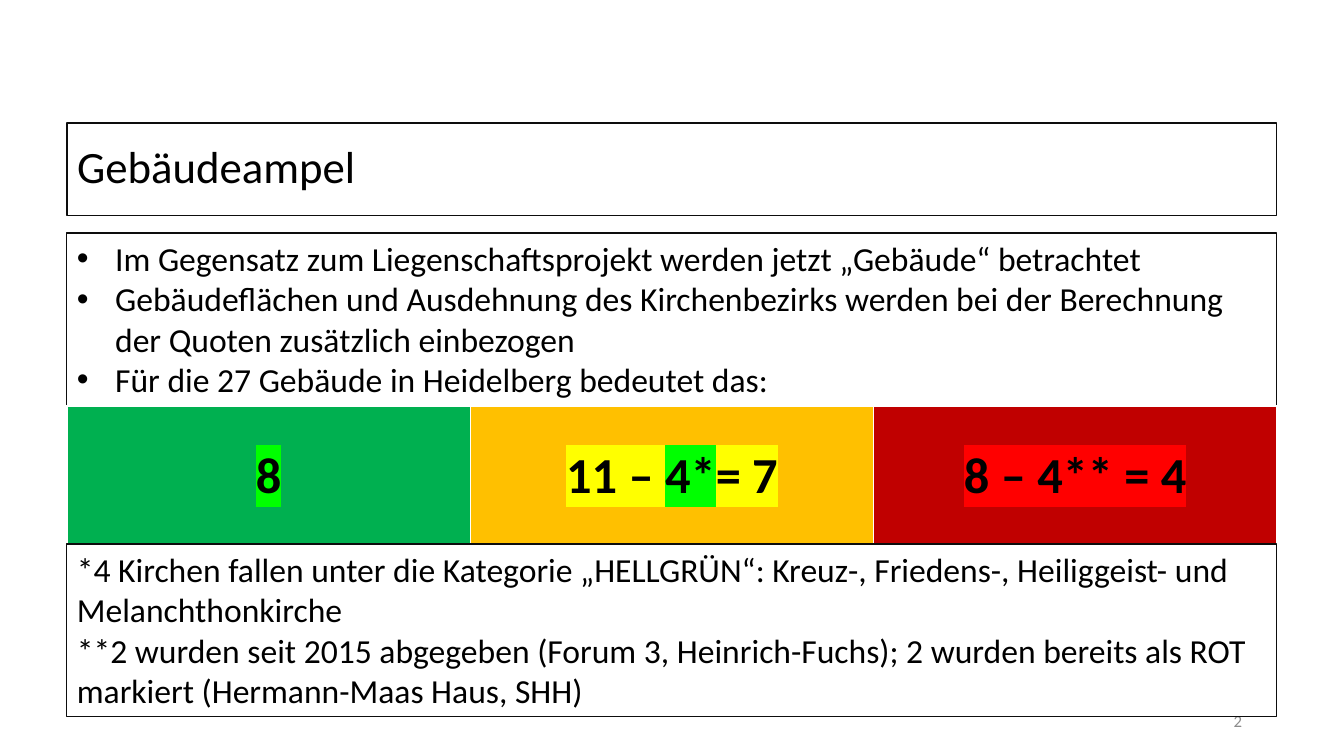
from lxml import etree
from pptx import Presentation
from pptx import util as u
from pptx.dml.color import RGBColor
from pptx.enum import shapes, text
from pptx.oxml.ns import qn

PX = 914400 / 100.8
FONT, BLACK, BORDER = "Calibri", "000000", "0D0D0D"
LEFT, WIDTH = 67, 1210

TITLE = "Gebäudeampel"
POINTS = [
    "Im Gegensatz zum Liegenschaftsprojekt werden jetzt „Gebäude“ betrachtet",
    "Gebäudeflächen und Ausdehnung des Kirchenbezirks werden bei der Berechnung "
    "der Quoten zusätzlich einbezogen",
    "Für die 27 Gebäude in Heidelberg bedeutet das:",
]
# cell fill, then runs of text with their highlight
LIGHTS = [
    ("00B050", [("8", "00FF00")]),
    ("FFC000", [("11 – ", "FFFF00"), ("4*", "00FF00"), ("= 7", "FFFF00")]),
    ("C00000", [("8 – 4** = 4", "FF0000")]),
]
FOOTNOTES = [
    "*4 Kirchen fallen unter die Kategorie „HELLGRÜN“: Kreuz-, Friedens-, "
    "Heiliggeist- und Melanchthonkirche",
    "**2 wurden seit 2015 abgegeben (Forum 3, Heinrich-Fuchs); 2 wurden bereits "
    "als ROT markiert (Hermann-Maas Haus, SHH)",
]
PAGE = "2"


def px(*lengths):
    return [round(n * PX) for n in lengths]


def rgb(value):
    return RGBColor.from_string(value)


def style(font, size, color=BLACK, bold=False):
    font.name, font.size, font.bold = FONT, u.Pt(size), bold
    font.color.rgb = rgb(color)


def outline(sp):
    sp.fill.background()
    sp.line.color.rgb = rgb(BORDER)
    sp.line.width = u.Pt(0.75)


def add_bullet(p):
    pPr = p._p.get_or_add_pPr()
    indent = u.Inches(0.38)
    pPr.set("marL", str(indent))
    pPr.set("indent", str(-indent))
    etree.SubElement(pPr, qn("a:buFont"), typeface="Arial")
    etree.SubElement(pPr, qn("a:buChar"), char="•")


def highlight(r, color):
    mark = etree.Element(qn("a:highlight"))
    etree.SubElement(mark, qn("a:srgbClr"), val=color)
    r._r.rPr.find(qn("a:solidFill")).addnext(mark)


def add_box(s, top, height, lines, bulleted=False):
    sp = s.shapes.add_shape(shapes.MSO_SHAPE.RECTANGLE, *px(LEFT, top, WIDTH, height))
    sp.shadow.inherit = False
    outline(sp)
    tf = sp.text_frame
    tf.word_wrap = True
    tf.vertical_anchor = text.MSO_ANCHOR.TOP
    tf.text = "\n".join(lines)
    for p in tf.paragraphs:
        p.alignment = text.PP_ALIGN.LEFT
        if bulleted:
            add_bullet(p)
        style(p.runs[0].font, 24)


def add_title(s):
    sp = s.shapes.title
    sp.left, sp.top, sp.width, sp.height = px(LEFT, 123, WIDTH, 93)
    outline(sp)
    tf = sp.text_frame
    tf.text = TITLE
    tf.auto_size = text.MSO_AUTO_SIZE.NONE
    tf.vertical_anchor = text.MSO_ANCHOR.MIDDLE
    p = tf.paragraphs[0]
    p.alignment = text.PP_ALIGN.LEFT
    p.line_spacing = 0.9
    style(p.runs[0].font, 32)


def add_lights(s):
    frame = s.shapes.add_table(1, len(LIGHTS), *px(LEFT, 406, WIDTH, 140))
    for cell, (fill, parts) in zip(frame.table.iter_cells(), LIGHTS):
        cell.fill.solid()
        cell.fill.fore_color.rgb = rgb(fill)
        cell.vertical_anchor = text.MSO_ANCHOR.MIDDLE
        p = cell.text_frame.paragraphs[0]
        p.alignment = text.PP_ALIGN.CENTER
        for words, color in parts:
            r = p.add_run()
            r.text = words
            style(r.font, 36, bold=True)
            highlight(r, color)


def add_page_number(s):
    tf = s.shapes.add_textbox(*px(950, 701, 302, 40)).text_frame
    tf.word_wrap = True
    tf.vertical_anchor = text.MSO_ANCHOR.MIDDLE
    tf.text = PAGE
    p = tf.paragraphs[0]
    p.alignment = text.PP_ALIGN.RIGHT
    style(p.runs[0].font, 12, "8C8C8C")


def main():
    prs = Presentation()
    prs.slide_width, prs.slide_height = px(1344, 756)
    s = prs.slides.add_slide(prs.slide_layouts[5])
    add_page_number(s)
    add_title(s)
    add_box(s, 233, 173, POINTS, bulleted=True)
    add_lights(s)
    add_box(s, 544, 173, FOOTNOTES)
    prs.save("out.pptx")


if __name__ == "__main__":
    main()
